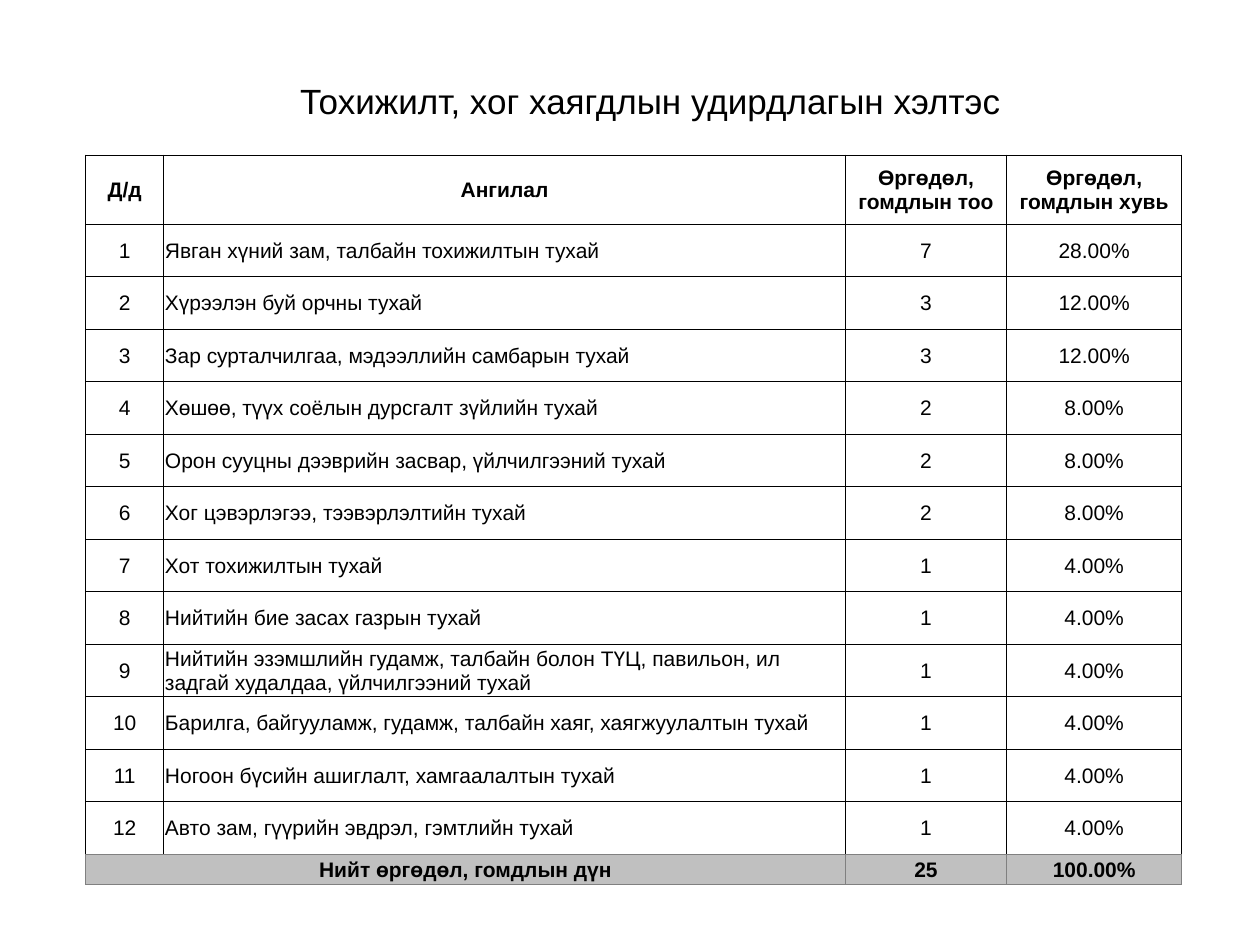
from typing import NamedTuple

from lxml import etree
from pptx import Presentation
from pptx import util as u
from pptx.dml import color
from pptx.enum import text
from pptx.oxml import ns

FONT = "Arial"
BLACK, GRAY, SILVER, WHITE = "000000", "808080", "C0C0C0", "FFFFFF"
CENTER, LEFT = text.PP_ALIGN.CENTER, text.PP_ALIGN.LEFT
COLUMN_WIDTHS = (0.62, 5.41, 1.28, 1.39)
TABLE_HEIGHT, HEADER_HEIGHT, TOTAL_HEIGHT = 5.79, 0.55, 0.24


class Complaint(NamedTuple):
    category: str
    count: int


class RowStyle(NamedTuple):
    bold: bool
    fill: str
    top: str
    side: str
    bottom: str


HEADER = RowStyle(True, WHITE, BLACK, BLACK, BLACK)
BODY = RowStyle(False, WHITE, BLACK, BLACK, BLACK)
LAST_BODY = RowStyle(False, WHITE, BLACK, BLACK, GRAY)
TOTAL = RowStyle(True, SILVER, GRAY, GRAY, GRAY)

HEADINGS = ("Д/д", "Ангилал", "Өргөдөл, гомдлын тоо", "Өргөдөл, гомдлын хувь")
COMPLAINTS = (
    Complaint("Явган хүний зам, талбайн тохижилтын тухай", 7),
    Complaint("Хүрээлэн буй орчны тухай", 3),
    Complaint("Зар сурталчилгаа, мэдээллийн самбарын тухай", 3),
    Complaint("Хөшөө, түүх соёлын дурсгалт зүйлийн тухай", 2),
    Complaint("Орон сууцны дээврийн засвар, үйлчилгээний тухай", 2),
    Complaint("Хог цэвэрлэгээ, тээвэрлэлтийн тухай", 2),
    Complaint("Хот тохижилтын тухай", 1),
    Complaint("Нийтийн бие засах газрын тухай", 1),
    Complaint("Нийтийн эзэмшлийн гудамж, талбайн болон ТҮЦ, павильон, ил "
              "задгай худалдаа, үйлчилгээний тухай", 1),
    Complaint("Барилга, байгууламж, гудамж, талбайн хаяг, хаягжуулалтын тухай", 1),
    Complaint("Ногоон бүсийн ашиглалт, хамгаалалтын тухай", 1),
    Complaint("Авто зам, гүүрийн эвдрэл, гэмтлийн тухай", 1),
)


def set_color(target, value: str) -> None:
    target.rgb = color.RGBColor.from_string(value)


def add_run(paragraph, wording: str, size: float, bold: bool = False) -> None:
    run = paragraph.add_run()
    run.text = wording
    run.font.name = FONT
    run.font.size = u.Pt(size)
    run.font.bold = bold
    set_color(run.font.color, BLACK)


def set_borders(cell, style: RowStyle) -> None:
    properties = cell._tc.get_or_add_tcPr()
    edges = (("L", style.side), ("R", style.side), ("T", style.top), ("B", style.bottom))
    for edge, shade in edges:
        line = etree.SubElement(properties, ns.qn(f"a:ln{edge}"), w=str(u.Pt(0.5)))
        solid = etree.SubElement(line, ns.qn("a:solidFill"))
        etree.SubElement(solid, ns.qn("a:srgbClr"), val=shade)


def fill_row(cells, values, style: RowStyle) -> None:
    for column, (cell, value) in enumerate(zip(cells, values)):
        set_borders(cell, style)
        cell.fill.solid()
        set_color(cell.fill.fore_color, style.fill)
        cell.margin_left = cell.margin_right = cell.margin_top = u.Inches(0.01)
        cell.margin_bottom = 0
        cell.vertical_anchor = text.MSO_ANCHOR.MIDDLE
        paragraph = cell.text_frame.paragraphs[0]
        paragraph.alignment = LEFT if column == 1 and not style.bold else CENTER
        if value:
            add_run(paragraph, value, 12, style.bold)


def add_title(slide, wording: str) -> None:
    title = slide.shapes.title
    title.left, title.top = u.Inches(0.89), u.Inches(0.62)
    title.width, title.height = u.Inches(8.62), u.Inches(0.4)
    frame = title.text_frame
    frame.word_wrap = True
    frame.auto_size = text.MSO_AUTO_SIZE.SHAPE_TO_FIT_TEXT
    frame.vertical_anchor = text.MSO_ANCHOR.MIDDLE
    paragraph = frame.paragraphs[0]
    paragraph.alignment = CENTER
    paragraph.line_spacing = 0.9
    add_run(paragraph, wording, 20)


def add_complaint_table(slide) -> None:
    total = sum(complaint.count for complaint in COMPLAINTS)
    rows = [(HEADINGS, HEADER)]
    for number, (category, count) in enumerate(COMPLAINTS, 1):
        style = LAST_BODY if number == len(COMPLAINTS) else BODY
        rows.append(((str(number), category, str(count), f"{count / total:.2%}"), style))
    rows.append((("Нийт өргөдөл, гомдлын дүн", "", str(total), "100.00%"), TOTAL))

    table = slide.shapes.add_table(
        len(rows), len(COLUMN_WIDTHS), u.Inches(0.68), u.Inches(1.23),
        u.Inches(sum(COLUMN_WIDTHS)), u.Inches(TABLE_HEIGHT)).table
    table.first_row = table.horz_banding = False
    for column, width in zip(table.columns, COLUMN_WIDTHS):
        column.width = u.Inches(width)

    body_height = (TABLE_HEIGHT - HEADER_HEIGHT - TOTAL_HEIGHT) / len(COMPLAINTS)
    heights = [HEADER_HEIGHT, *[body_height] * len(COMPLAINTS), TOTAL_HEIGHT]
    for row, height, (values, style) in zip(table.rows, heights, rows):
        row.height = u.Inches(height)
        fill_row(row.cells, values, style)
    last = len(rows) - 1
    table.cell(last, 0).merge(table.cell(last, 1))


def main() -> None:
    deck = Presentation()
    deck.slide_width, deck.slide_height = u.Inches(10), u.Inches(7.5)
    slide = deck.slides.add_slide(deck.slide_layouts[5])
    add_title(slide, "Тохижилт, хог хаягдлын удирдлагын хэлтэс ")
    add_complaint_table(slide)
    deck.save("out.pptx")


if __name__ == "__main__":
    main()
